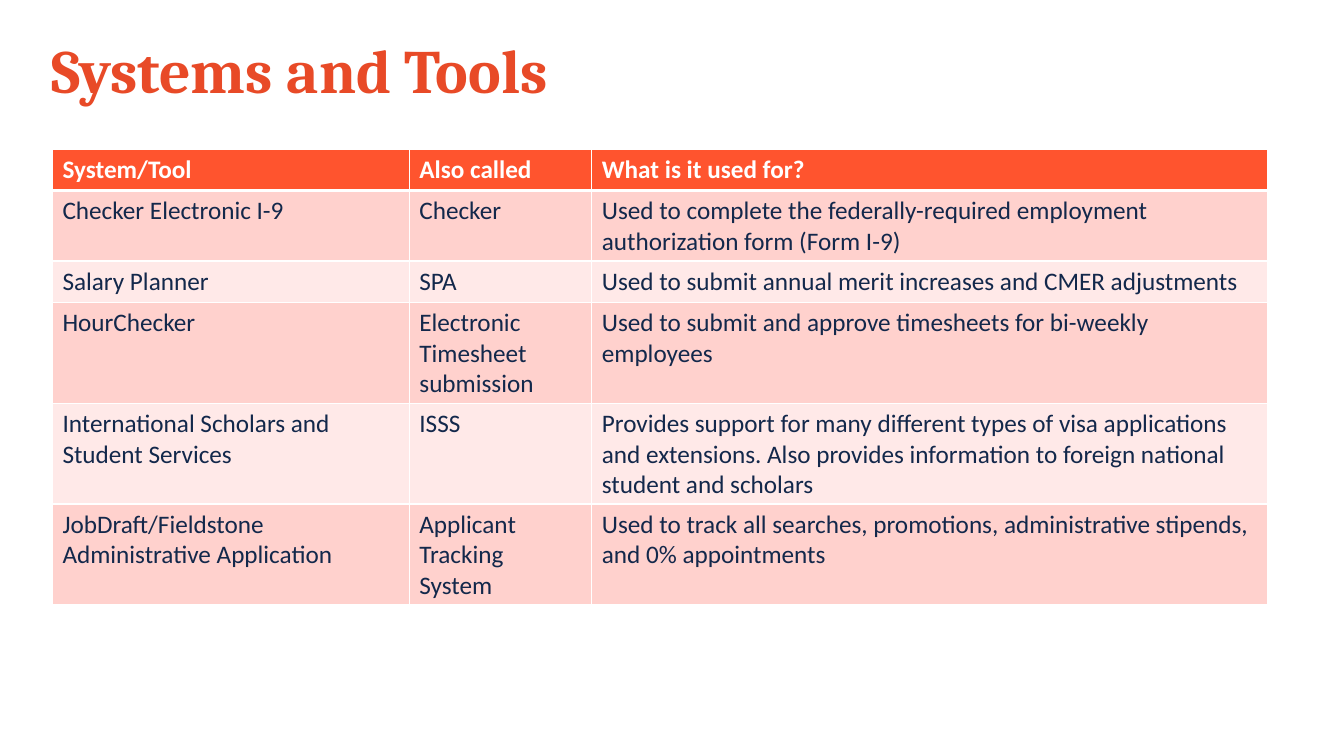
from dataclasses import dataclass

from lxml import etree
from pptx import Presentation
from pptx.dml.color import RGBColor
from pptx.enum.text import MSO_ANCHOR
from pptx.oxml.ns import qn
from pptx.slide import Slide
from pptx.table import _Cell
from pptx.text.text import TextFrame
from pptx.util import Inches, Pt

TOP = MSO_ANCHOR.TOP
SLIDE_WIDTH, SLIDE_HEIGHT = 13.33, 7.5
TABLE_LEFT, TABLE_TOP, TABLE_HEIGHT = 0.52, 1.48, 4.51
COLUMN_WIDTHS = (3.54, 1.81, 6.7)
ROW_HEIGHT = 0.41
WHITE, NAVY, ORANGE, TITLE_ORANGE = "FFFFFF", "13284B", "FF542E", "E84A27"
BAND_FILLS = ("FFE9E8", "FFD1CD")
THIN, THICK = 1, 3


@dataclass(frozen=True)
class Tool:
    """One table row: a system, its other name and its purpose."""

    name: str
    alias: str
    purpose: str


TOOLS = (
    Tool("System/Tool", "Also called", "What is it used for?"),
    Tool("Checker Electronic I-9", "Checker",
         "Used to complete the federally-required employment authorization form (Form I-9)"),
    Tool("Salary Planner", "SPA",
         "Used to submit annual merit increases and CMER adjustments"),
    Tool("HourChecker", "Electronic Timesheet submission",
         "Used to submit and approve timesheets for bi-weekly employees"),
    Tool("International Scholars and Student Services", "ISSS",
         "Provides support for many different types of visa applications and extensions. "
         "Also provides information to foreign national student and scholars"),
    Tool("JobDraft/Fieldstone Administrative Application", "Applicant Tracking System",
         "Used to track all searches, promotions, administrative stipends, and 0% appointments"),
)


def color(value: str) -> RGBColor:
    """Turn a hex string into a colour."""
    return RGBColor.from_string(value)


def write_text(frame: TextFrame, text: str, *, size: float, font: str, fill: str,
               bold: bool = False, line_spacing: float = 1.0) -> None:
    """Write one formatted paragraph into a text frame."""
    frame.word_wrap = True
    paragraph = frame.paragraphs[0]
    paragraph.line_spacing = line_spacing
    run = paragraph.add_run()
    run.text = text
    run.font.size = Pt(size)
    run.font.name = font
    run.font.bold = bold
    run.font.color.rgb = color(fill)


def set_borders(cell: _Cell, top: float, bottom: float) -> None:
    """Give a cell white borders with the given top and bottom widths."""
    properties = cell._tc.get_or_add_tcPr()
    for side, width in (("L", THIN), ("R", THIN), ("T", top), ("B", bottom)):
        line = etree.SubElement(properties, qn(f"a:ln{side}"), w=str(Pt(width)))
        solid = etree.SubElement(line, qn("a:solidFill"))
        etree.SubElement(solid, qn("a:srgbClr"), val=WHITE)


def add_title(slide: Slide, text: str) -> None:
    """Add the slide heading."""
    box = slide.shapes.add_textbox(Inches(0.41), Inches(0.4), Inches(10.51), Inches(1.45))
    frame = box.text_frame
    frame.vertical_anchor = TOP
    frame.margin_top = 0
    write_text(frame, text, size=44, font="Cambria", fill=TITLE_ORANGE, bold=True,
               line_spacing=0.9)


def add_tool_table(slide: Slide) -> None:
    """Add the banded table of systems and tools."""
    shape = slide.shapes.add_table(
        len(TOOLS), len(COLUMN_WIDTHS), Inches(TABLE_LEFT), Inches(TABLE_TOP),
        Inches(sum(COLUMN_WIDTHS)), Inches(TABLE_HEIGHT))
    table = shape.table
    for column, width in zip(table.columns, COLUMN_WIDTHS):
        column.width = Inches(width)
    for index, (row, tool) in enumerate(zip(table.rows, TOOLS)):
        row.height = Inches(ROW_HEIGHT)
        header = index == 0
        for cell, text in zip(row.cells, (tool.name, tool.alias, tool.purpose)):
            set_borders(cell, top=THICK if index == 1 else THIN,
                        bottom=THICK if header else THIN)
            cell.fill.solid()
            cell.fill.fore_color.rgb = color(ORANGE if header else BAND_FILLS[index % 2])
            write_text(cell.text_frame, text, size=18, font="Calibri",
                       fill=WHITE if header else NAVY, bold=header)
    shape.height = Inches(TABLE_HEIGHT)


def main() -> None:
    """Build and save the presentation."""
    presentation = Presentation()
    presentation.slide_width = Inches(SLIDE_WIDTH)
    presentation.slide_height = Inches(SLIDE_HEIGHT)
    slide = presentation.slides.add_slide(presentation.slide_layouts[6])
    add_title(slide, "Systems and Tools")
    add_tool_table(slide)
    presentation.save("out.pptx")


if __name__ == "__main__":
    main()
